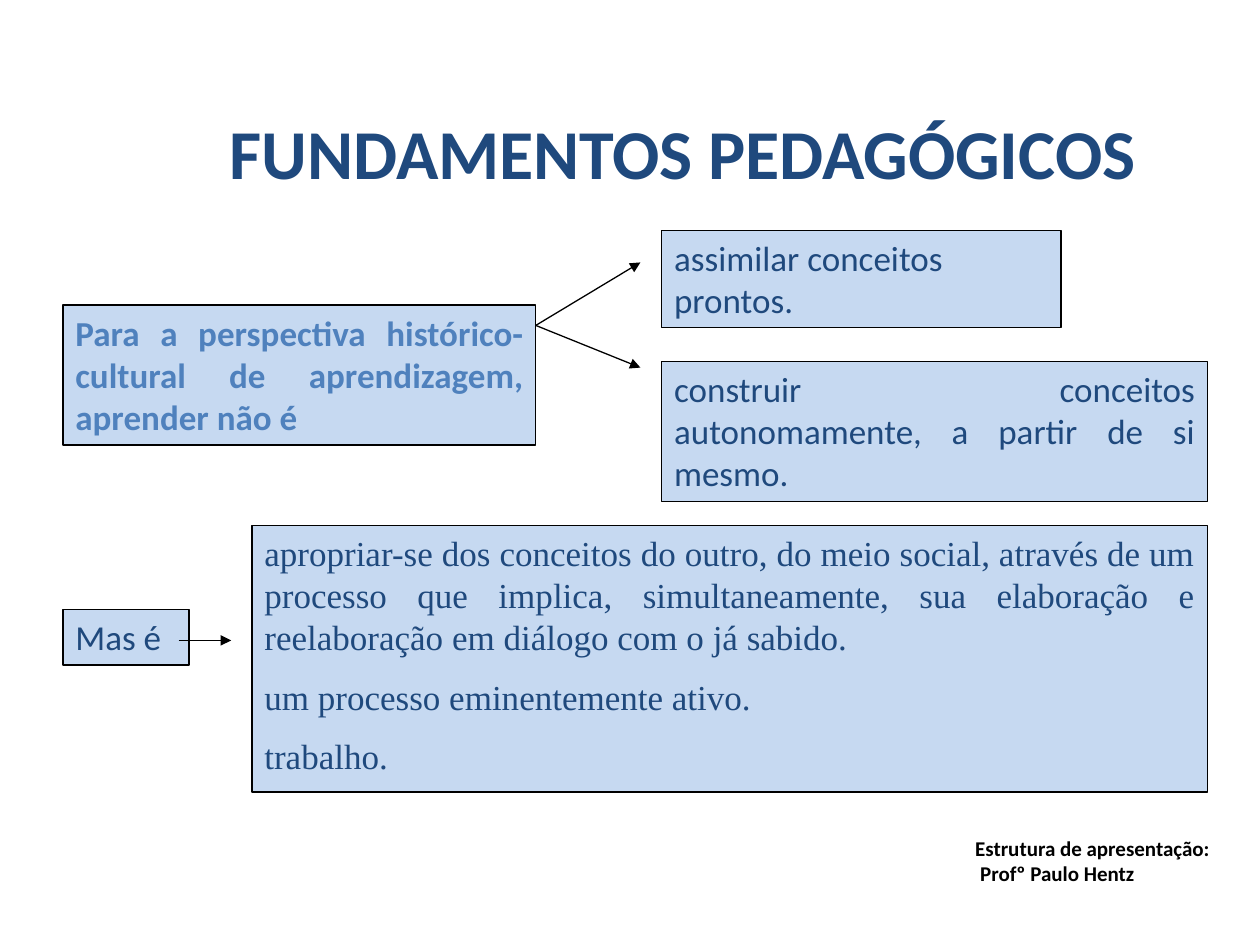
from pptx import Presentation
from pptx.dml.color import RGBColor
from pptx.enum.shapes import MSO_CONNECTOR, MSO_SHAPE
from pptx.enum.text import MSO_ANCHOR, PP_ALIGN
from pptx.oxml.ns import qn
from pptx.util import Cm, Pt
from lxml import etree

LEFT, CENTER, JUSTIFY = PP_ALIGN.LEFT, PP_ALIGN.CENTER, PP_ALIGN.JUSTIFY
TOP, BOTTOM = MSO_ANCHOR.TOP, MSO_ANCHOR.BOTTOM
RECT, STRAIGHT = MSO_SHAPE.RECTANGLE, MSO_CONNECTOR.STRAIGHT
NAVY, BLUE, PALE, BLACK = "1F497D", "4F81BD", "C6D9F1", "000000"
SANS, SERIF = "Calibri", "Times New Roman"


def rgb(value):
    return RGBColor.from_string(value)


def write(sp, lines, color, align=LEFT, anchor=TOP, gap=0, **font):
    tf = sp.text_frame
    tf.word_wrap = True
    tf.vertical_anchor = anchor
    for i, line in enumerate(lines):
        p = tf.paragraphs[0] if i == 0 else tf.add_paragraph()
        p.alignment = align
        if i and gap:
            p.space_before = Pt(gap)
        r = p.add_run()
        r.text = line
        r.font.color.rgb = rgb(color)
        for name, value in font.items():
            setattr(r.font, name, value)


prs = Presentation()
prs.slide_width, prs.slide_height = Cm(25.4), Cm(19.05)
s = prs.slides.add_slide(prs.slide_layouts[6])

# Title
sp = s.shapes.add_textbox(Cm(2.97), Cm(0.84), Cm(21.59), Cm(3.18))
write(sp, ["FUNDAMENTOS PEDAGÓGICOS"], NAVY, CENTER, BOTTOM,
      name=SANS, size=Pt(40), bold=True)

# Concept boxes: position and size in cm, alignment, colour, font, bold, text
boxes = [
    (1.27, 6.15, 9.53, 2.82, JUSTIFY, BLUE, SANS, True,
     ["Para a perspectiva histórico-cultural de aprendizagem, aprender não é"]),
    (13.34, 4.65, 8.05, 1.96, LEFT, NAVY, SANS, False,
     ["assimilar conceitos prontos."]),
    (13.34, 7.29, 11, 2.82, JUSTIFY, NAVY, SANS, False,
     ["construir conceitos autonomamente, a partir de si mesmo."]),
    (1.27, 12.29, 2.54, 1.12, LEFT, NAVY, SANS, False, ["Mas é"]),
    (5.08, 10.59, 19.26, 5.38, JUSTIFY, NAVY, SERIF, False,
     ["apropriar-se dos conceitos do outro, do meio social, através de um "
      "processo que implica, simultaneamente, sua elaboração e reelaboração "
      "em diálogo com o já sabido.",
      "um processo eminentemente ativo.",
      "trabalho."]),
]
for x, y, w, h, align, color, face, bold, lines in boxes:
    sp = s.shapes.add_shape(RECT, Cm(x), Cm(y), Cm(w), Cm(h))
    sp.shadow.inherit = False
    sp.fill.solid()
    sp.fill.fore_color.rgb = rgb(PALE)
    sp.line.color.rgb = rgb(BLACK)
    sp.line.width = Pt(0.75)
    write(sp, lines, color, align, gap=10, name=face, size=Pt(20), bold=bold)

# Arrows
arrows = [
    (10.8, 6.56, 12.91, 5.29),
    (10.8, 6.56, 12.91, 7.41),
    (3.6, 12.91, 4.66, 12.91),
]
for ends in arrows:
    cn = s.shapes.add_connector(STRAIGHT, *[Cm(v) for v in ends])
    cn.line.color.rgb = rgb(BLACK)
    cn.line.width = Pt(0.75)
    etree.SubElement(cn.line._get_or_add_ln(), qn("a:tailEnd"), type="triangle")
    etree.SubElement(cn._element.spPr, qn("a:effectLst"))

# Credit, each line with its own indent
sp = s.shapes.add_textbox(Cm(17.91), Cm(16.71), Cm(7.01), Cm(1.27))
write(sp, ["Estrutura de apresentação:", "Profº Paulo Hentz"], BLACK,
      name=SANS, size=Pt(12), bold=True)
for p, indent in zip(sp.text_frame.paragraphs, (1.5, 1.6)):
    p._p.get_or_add_pPr().set("marL", str(Cm(indent)))

prs.save("out.pptx")
